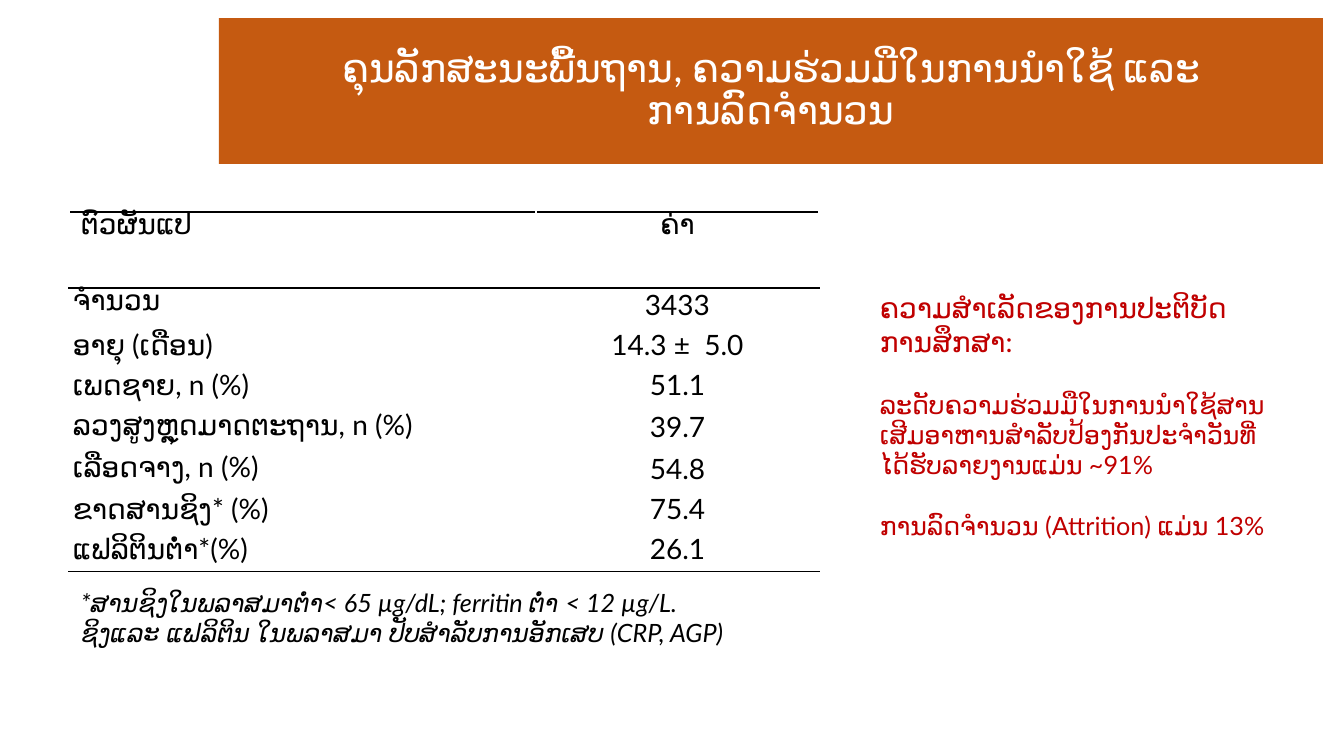
from lxml import etree
from pptx import Presentation
from pptx import util as u
from pptx.dml import color
from pptx.enum import text
from pptx.oxml import ns

PX = 9071.43
HUES = {"orange": "C55A11", "white": "FFFFFF", "black": "000000", "red": "C00000"}
LEFT, MID = text.PP_ALIGN.LEFT, text.PP_ALIGN.CENTER


def emu(*sides):
    return [round(side * PX) for side in sides]


def style(par, hue, size, align=LEFT, **looks):
    par.alignment = align
    par.font.color.rgb = color.RGBColor.from_string(HUES[hue])
    looks |= {"name": "Lato", "size": u.Pt(size)}
    for key, value in looks.items():
        setattr(par.font, key, value)


deck = Presentation()
deck.slide_width, deck.slide_height = emu(1344, 756)
slide = deck.slides.add_slide(deck.slide_layouts[5])

title = slide.shapes.title
title.left, title.top, title.width, title.height = emu(219, 18, 1104, 146)
title.fill.solid()
title.fill.fore_color.rgb = color.RGBColor.from_string(HUES["orange"])
frame = title.text_frame
frame.text = "ຄຸນລັກສະນະພື້ນຖານ, ຄວາມຮ່ວມມືໃນການນຳໃຊ້ ແລະ\vການລົດຈຳນວນ"
frame.auto_size = text.MSO_AUTO_SIZE.NONE
frame.vertical_anchor = text.MSO_ANCHOR.MIDDLE
frame.paragraphs[0].line_spacing = 0.9
style(frame.paragraphs[0], "white", 28, MID)

rows = [
    ("ຕົວຜັນແປ", "ຄ່າ", 76),
    ("ຈຳນວນ", "3433", 40),
    ("ອາຍຸ (ເດືອນ)", "14.3 ±  5.0", 40),
    ("ເພດຊາຍ, n (%)", "51.1", 40),
    ("ລວງສູງຫຼຸດມາດຕະຖານ, n (%)", "39.7", 42),
    ("ເລືອດຈາງ, n (%)", "54.8", 42),
    ("ຂາດສານຊິງ* (%)", "75.4", 40),
    ("ແຟລິຕິນຕໍ່າ*(%)", "26.1", 40),
]
edges = {0: ["lnT", "lnB"], 1: ["lnT"], len(rows) - 1: ["lnB"]}
table = slide.shapes.add_table(len(rows), 2, *emu(69, 212, 750, 360)).table
table.first_row = table.horz_banding = False
for col, width in zip(table.columns, emu(467, 283)):
    col.width = width

for i, (label, value, height) in enumerate(rows):
    table.rows[i].height = emu(height)[0]
    for j, (words, align) in enumerate([(label, LEFT), (value, MID)]):
        cell = table.cell(i, j)
        cell.text = words
        inset = 12 if (i, j) == (0, 0) else 4
        cell.margin_left, cell.margin_right, cell.margin_top, cell.margin_bottom = emu(inset, 4, 0, 0)
        style(cell.text_frame.paragraphs[0], "black", 20, align)
        if value in ("39.7", "54.8") and j == 1:
            cell.text_frame.paragraphs[0].line_spacing = 1.07
        cell.fill.solid()
        cell.fill.fore_color.rgb = color.RGBColor.from_string(HUES["white"])
        props = cell._tc.get_or_add_tcPr()
        for k, edge in enumerate(edges.get(i, [])):
            line = etree.Element(ns.qn("a:" + edge), w=str(u.Pt(1)))
            fill = etree.SubElement(line, ns.qn("a:solidFill"))
            etree.SubElement(fill, ns.qn("a:srgbClr"), val=HUES["black"])
            props.insert(k, line)

notes = [
    ((71, 582, 685, 102), "black", True, [
        ("*ສານຊິງໃນພລາສມາຕ່ຳ< 65 µg/dL; ferritin ຕໍ່າ < 12 µg/L.\v"
         "ຊິງແລະ ແຟລິຕິນ ໃນພລາສມາ ປັບສຳລັບການອັກເສບ (CRP, AGP)", 18)]),
    ((870, 286, 425, 291), "red", False, [
        ("ຄວາມສຳເລັດຂອງການປະຕິບັດການສຶກສາ:", 20),
        ("ລະດັບຄວາມຮ່ວມມືໃນການນຳໃຊ້ສານເສີມອາຫານສຳລັບປ້ອງກັນປະຈຳວັນທີ່ໄດ້ຮັບລາຍງານແມ່ນ ~91%", 18),
        ("ການລົດຈຳນວນ (Attrition) ແມ່ນ 13%", 18)]),
]
for place, hue, slant, lines in notes:
    frame = slide.shapes.add_textbox(*emu(*place)).text_frame
    frame.word_wrap = True
    for i, (words, size) in enumerate(lines):
        par = frame.add_paragraph() if i else frame.paragraphs[0]
        par.text = words
        if i:
            par.space_before = u.Pt(22)
        style(par, hue, size, italic=slant)

deck.save("out.pptx")
